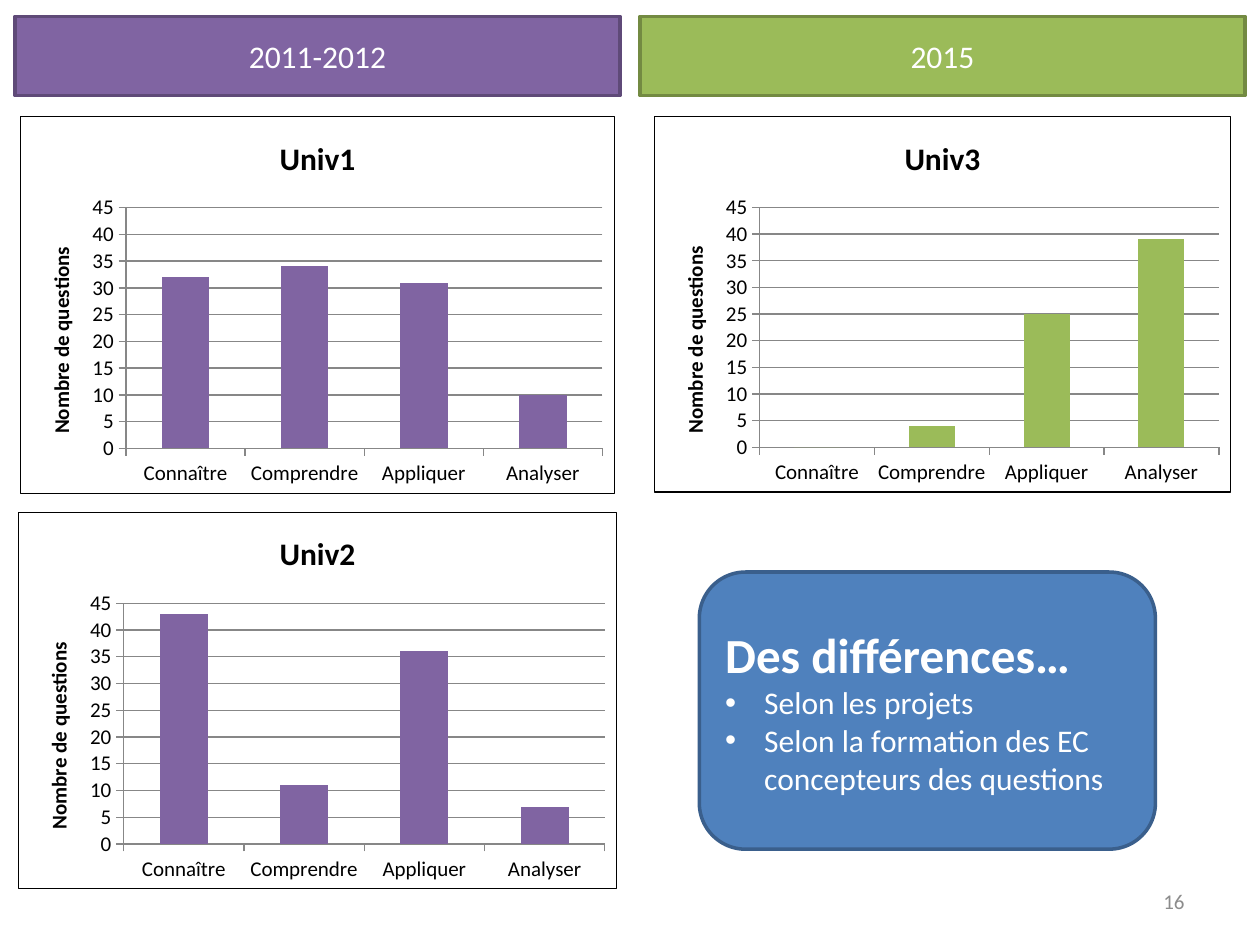
from lxml import etree
from pptx import Presentation
from pptx.chart.data import CategoryChartData
from pptx.dml.color import RGBColor
from pptx.enum.chart import XL_CHART_TYPE, XL_TICK_MARK
from pptx.enum.shapes import MSO_SHAPE
from pptx.enum.text import MSO_ANCHOR, PP_ALIGN
from pptx.oxml import parse_xml
from pptx.oxml.ns import nsdecls, qn
from pptx.util import Inches, Pt

COLUMNS = XL_CHART_TYPE.COLUMN_CLUSTERED
TICK_OUTSIDE = XL_TICK_MARK.OUTSIDE
RECTANGLE = MSO_SHAPE.RECTANGLE
ROUNDED = MSO_SHAPE.ROUNDED_RECTANGLE
MIDDLE = MSO_ANCHOR.MIDDLE
LEFT, CENTER, RIGHT = PP_ALIGN.LEFT, PP_ALIGN.CENTER, PP_ALIGN.RIGHT

FONT = "Calibri"
BLACK = RGBColor(0x00, 0x00, 0x00)
WHITE = RGBColor(0xFF, 0xFF, 0xFF)
GRAY = RGBColor(0x8C, 0x8C, 0x8C)
AXIS_GRAY = RGBColor(0x87, 0x87, 0x87)
PURPLE = RGBColor(0x80, 0x64, 0xA2)
DARK_PURPLE = RGBColor(0x5F, 0x4A, 0x78)
GREEN = RGBColor(0x9B, 0xBB, 0x59)
DARK_GREEN = RGBColor(0x73, 0x8A, 0x42)
BLUE = RGBColor(0x4F, 0x81, 0xBD)
DARK_BLUE = RGBColor(0x3A, 0x5F, 0x8C)

LEVELS = ["Connaître", "Comprendre", "Appliquer", "Analyser"]
CHARTS = [
    ("Univ1", (0.16, 0.92, 4.72, 3), [32, 34, 31, 10], PURPLE),
    ("Univ2", (0.14, 4.06, 4.76, 3), [43, 11, 36, 7], PURPLE),
    ("Univ3", (5.19, 0.92, 4.58, 2.99), [0, 4, 25, 39], GREEN),
]
BANNERS = [
    ("2011-2012", 0.12, PURPLE, DARK_PURPLE),
    ("2015", 5.08, GREEN, DARK_GREEN),
]
DIFFERENCES = ["Selon les projets", "Selon la formation des EC concepteurs des questions"]


def format_font(font, size, color, bold=False):
    values = {"name": FONT, "size": Pt(size), "bold": bold}
    for name, value in values.items():
        setattr(font, name, value)
    font.color.rgb = color


def write_paragraph(paragraph, text, size, color, alignment=LEFT, bold=False):
    paragraph.alignment = alignment
    run = paragraph.add_run()
    run.text = text
    format_font(run.font, size, color, bold)


def add_bullet(paragraph):
    properties = paragraph._p.get_or_add_pPr()
    properties.set("marL", str(Inches(0.31)))
    properties.set("indent", str(-Inches(0.31)))
    etree.SubElement(properties, qn("a:buFont"), typeface="Arial")
    etree.SubElement(properties, qn("a:buChar"), char="•")


def add_box(slide, kind, box, fill, outline):
    shape = slide.shapes.add_shape(kind, *map(Inches, box))
    shape.shadow.inherit = False
    shape.fill.solid()
    shape.fill.fore_color.rgb = fill
    shape.line.color.rgb = outline
    shape.line.width = Pt(2)
    shape.text_frame.word_wrap = True
    shape.text_frame.vertical_anchor = MIDDLE
    return shape


def add_banner(slide, text, left, fill, outline):
    shape = add_box(slide, RECTANGLE, (left, 0.13, 4.8, 0.63), fill, outline)
    write_paragraph(shape.text_frame.paragraphs[0], text, 18, WHITE, CENTER)


def add_chart_border(chart):
    border = parse_xml(
        f'<c:spPr {nsdecls("c", "a")}><a:solidFill><a:srgbClr val="{WHITE}"/></a:solidFill>'
        f'<a:ln w="{Pt(0.75)}"><a:solidFill><a:srgbClr val="{BLACK}"/></a:solidFill></a:ln></c:spPr>'
    )
    chart._chartSpace.find(qn("c:chart")).addnext(border)


def format_axis(axis):
    axis.major_tick_mark = TICK_OUTSIDE
    format_font(axis.tick_labels.font, 12, BLACK)
    axis.format.line.color.rgb = AXIS_GRAY
    axis.format.line.width = Pt(0.75)


def add_column_chart(slide, title, box, values, color):
    data = CategoryChartData()
    data.categories = LEVELS
    data.add_series("Series 1", values)
    chart = slide.shapes.add_chart(COLUMNS, *map(Inches, box), data).chart
    format_font(chart.font, 10, BLACK)
    add_chart_border(chart)
    chart.has_legend = False
    chart.has_title = True
    chart.chart_title.include_in_layout = False
    write_paragraph(chart.chart_title.text_frame.paragraphs[0], title, 18, BLACK, CENTER, True)

    format_axis(chart.category_axis)
    value_axis = chart.value_axis
    format_axis(value_axis)
    scale = {"minimum_scale": 0, "maximum_scale": 45, "major_unit": 5, "has_major_gridlines": True}
    for name, value in scale.items():
        setattr(value_axis, name, value)
    gridline = value_axis.major_gridlines.format.line
    gridline.color.rgb = AXIS_GRAY
    gridline.width = Pt(0.75)
    axis_title = value_axis.axis_title.text_frame
    write_paragraph(axis_title.paragraphs[0], "Nombre de questions", 12, BLACK, CENTER, True)
    axis_title._txBody.bodyPr.set("rot", "-5400000")
    axis_title._txBody.bodyPr.set("vert", "horz")

    plot = chart.plots[0]
    plot.gap_width = 150
    plot.vary_by_categories = False
    series_fill = plot.series[0].format.fill
    series_fill.solid()
    series_fill.fore_color.rgb = color


def add_differences(slide):
    shape = add_box(slide, ROUNDED, (5.55, 4.54, 3.62, 2.2), BLUE, DARK_BLUE)
    frame = shape.text_frame
    write_paragraph(frame.paragraphs[0], "Des différences…", 28, WHITE, bold=True)
    for text in DIFFERENCES:
        paragraph = frame.add_paragraph()
        write_paragraph(paragraph, text, 18, WHITE)
        add_bullet(paragraph)


def add_page_number(slide, number):
    box = slide.shapes.add_textbox(*map(Inches, (7.17, 6.95, 2.33, 0.4)))
    box.text_frame.word_wrap = True
    box.text_frame.vertical_anchor = MIDDLE
    write_paragraph(box.text_frame.paragraphs[0], number, 12, GRAY, RIGHT)


def main():
    presentation = Presentation()
    presentation.slide_width = Inches(10)
    presentation.slide_height = Inches(7.5)
    slide = presentation.slides.add_slide(presentation.slide_layouts[6])
    for chart in CHARTS:
        add_column_chart(slide, *chart)
    for banner in BANNERS:
        add_banner(slide, *banner)
    add_differences(slide)
    add_page_number(slide, "16")
    presentation.save("out.pptx")


if __name__ == "__main__":
    main()
